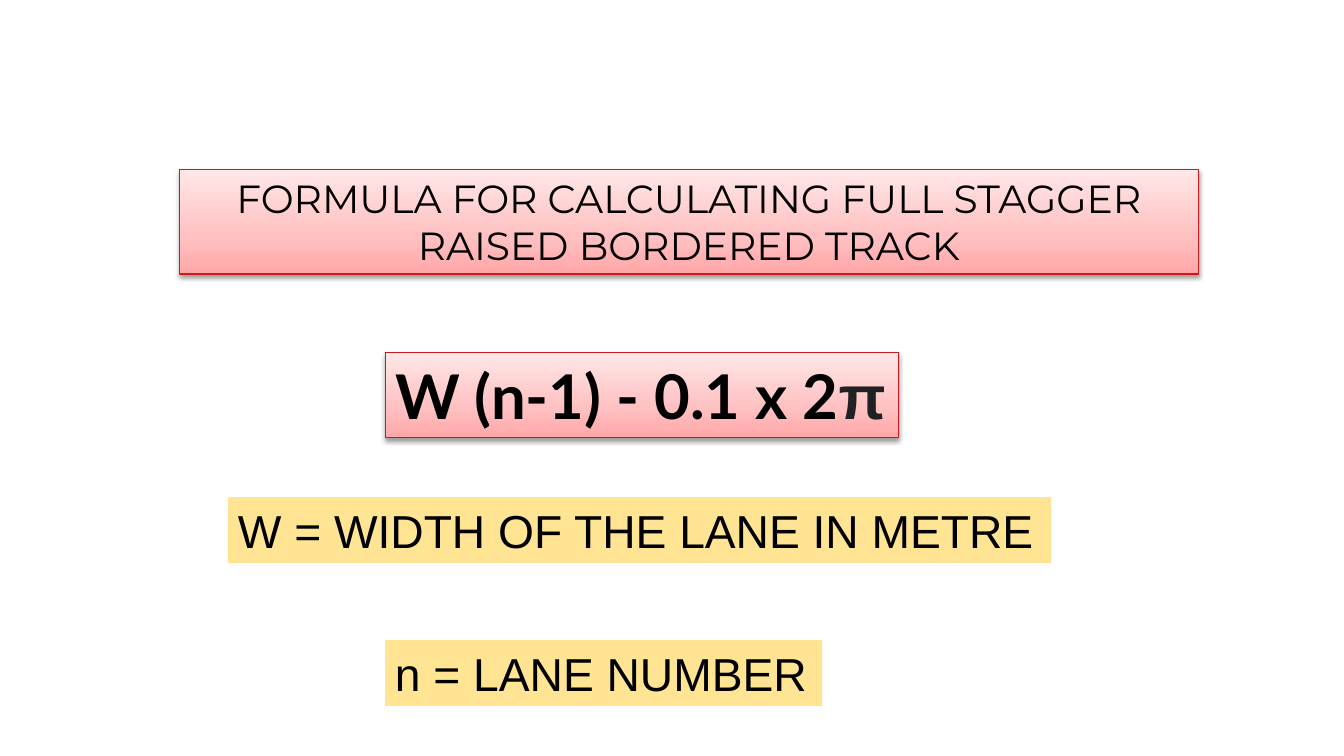
"""Build the slide with the full stagger formula for a raised bordered track."""
from dataclasses import dataclass

from lxml.etree import SubElement
from pptx import Presentation
from pptx.dml.color import RGBColor
from pptx.enum.text import MSO_ANCHOR, MSO_AUTO_SIZE, PP_ALIGN
from pptx.oxml.ns import qn
from pptx.shapes.autoshape import Shape
from pptx.util import Emu, Inches, Pt


@dataclass(frozen=True)
class Theme:
    ink: str = "000000"
    pi_ink: str = "202124"
    border: str = "CE1820"
    amber: str = "FFC000"
    amber_alpha: int = 42
    gradient: tuple[tuple[int, str], ...] = ((0, "FFA6A7"), (35, "FFC0C1"), (100, "FFE7E7"))
    title_font: str = "Montserrat"
    formula_font: str = "Lato"
    body_font: str = "Arial"
    title_size: int = 28
    formula_size: int = 44
    body_size: int = 33


@dataclass(frozen=True)
class Box:
    left: int
    top: int
    width: int
    height: int


@dataclass(frozen=True)
class Definition:
    box: Box
    text: str


THEME = Theme()
TITLE_BOX = Box(179, 169, 1019, 105)
TITLE_LINES = ("FORMULA FOR CALCULATING FULL STAGGER", "RAISED BORDERED TRACK")
FORMULA_BOX = Box(385, 353, 513, 85)
DEFINITIONS = (
    Definition(Box(228, 497, 823, 66), "W = WIDTH OF THE LANE IN METRE"),
    Definition(Box(385, 640, 437, 66), "n = LANE NUMBER"),
)


def px(n: int) -> Emu:
    return Emu(round(n * 914400 / 100.8))


def place(sp: Shape, box: Box) -> None:
    sp.left, sp.top = px(box.left), px(box.top)
    sp.width, sp.height = px(box.width), px(box.height)
    tf = sp.text_frame
    tf.word_wrap = True
    tf.auto_size = MSO_AUTO_SIZE.NONE
    tf.vertical_anchor = MSO_ANCHOR.TOP
    tf.margin_right = 0 if not sp.is_placeholder else tf.margin_left


def write(p, text: str, *, font: str, size: int, color: str = THEME.ink,
          bold: bool = False, align: PP_ALIGN = PP_ALIGN.LEFT) -> None:
    p.alignment = align
    r = p.add_run()
    r.text = text
    r.font.name, r.font.size, r.font.bold = font, Pt(size), bold
    r.font.color.rgb = RGBColor.from_string(color)


def style_red(sp: Shape) -> None:
    sp.fill.gradient()
    sp.fill.gradient_angle = 90
    stops = sp._element.spPr.find(qn("a:gradFill")).find(qn("a:gsLst"))
    stops.clear()
    for pos, color in THEME.gradient:
        gs = SubElement(stops, qn("a:gs"), pos=str(pos * 1000))
        SubElement(gs, qn("a:srgbClr"), val=color)
    sp.line.color.rgb = RGBColor.from_string(THEME.border)
    sp.line.width = Pt(0.75)
    effects = SubElement(sp._element.spPr, qn("a:effectLst"))
    shadow = SubElement(effects, qn("a:outerShdw"), blurRad="40000", dist="20000",
                        dir="5400000", rotWithShape="0")
    black = SubElement(shadow, qn("a:srgbClr"), val="000000")
    SubElement(black, qn("a:alpha"), val="38000")


def style_amber(sp: Shape) -> None:
    sp.fill.solid()
    sp.fill.fore_color.rgb = RGBColor.from_string(THEME.amber)
    color = sp._element.spPr.find(qn("a:solidFill")).find(qn("a:srgbClr"))
    SubElement(color, qn("a:alpha"), val=str(THEME.amber_alpha * 1000))


def main() -> None:
    prs = Presentation()
    prs.slide_width, prs.slide_height = Inches(13.33), Inches(7.5)
    s = prs.slides.add_slide(prs.slide_layouts[5])

    for definition in DEFINITIONS:
        sp = s.shapes.add_textbox(0, 0, 0, 0)
        place(sp, definition.box)
        style_amber(sp)
        write(sp.text_frame.paragraphs[0], definition.text,
              font=THEME.body_font, size=THEME.body_size)

    title = s.shapes.title
    place(title, TITLE_BOX)
    style_red(title)
    tf = title.text_frame
    for p, line in zip((tf.paragraphs[0], tf.add_paragraph()), TITLE_LINES):
        write(p, line, font=THEME.title_font, size=THEME.title_size, align=PP_ALIGN.CENTER)

    formula = s.shapes.add_textbox(0, 0, 0, 0)
    place(formula, FORMULA_BOX)
    style_red(formula)
    p = formula.text_frame.paragraphs[0]
    write(p, "W (n-1) - 0.1 x 2", font=THEME.formula_font, size=THEME.formula_size, bold=True)
    write(p, "π", font=THEME.body_font, size=THEME.formula_size, color=THEME.pi_ink, bold=True)

    prs.save("out.pptx")


if __name__ == "__main__":
    main()
